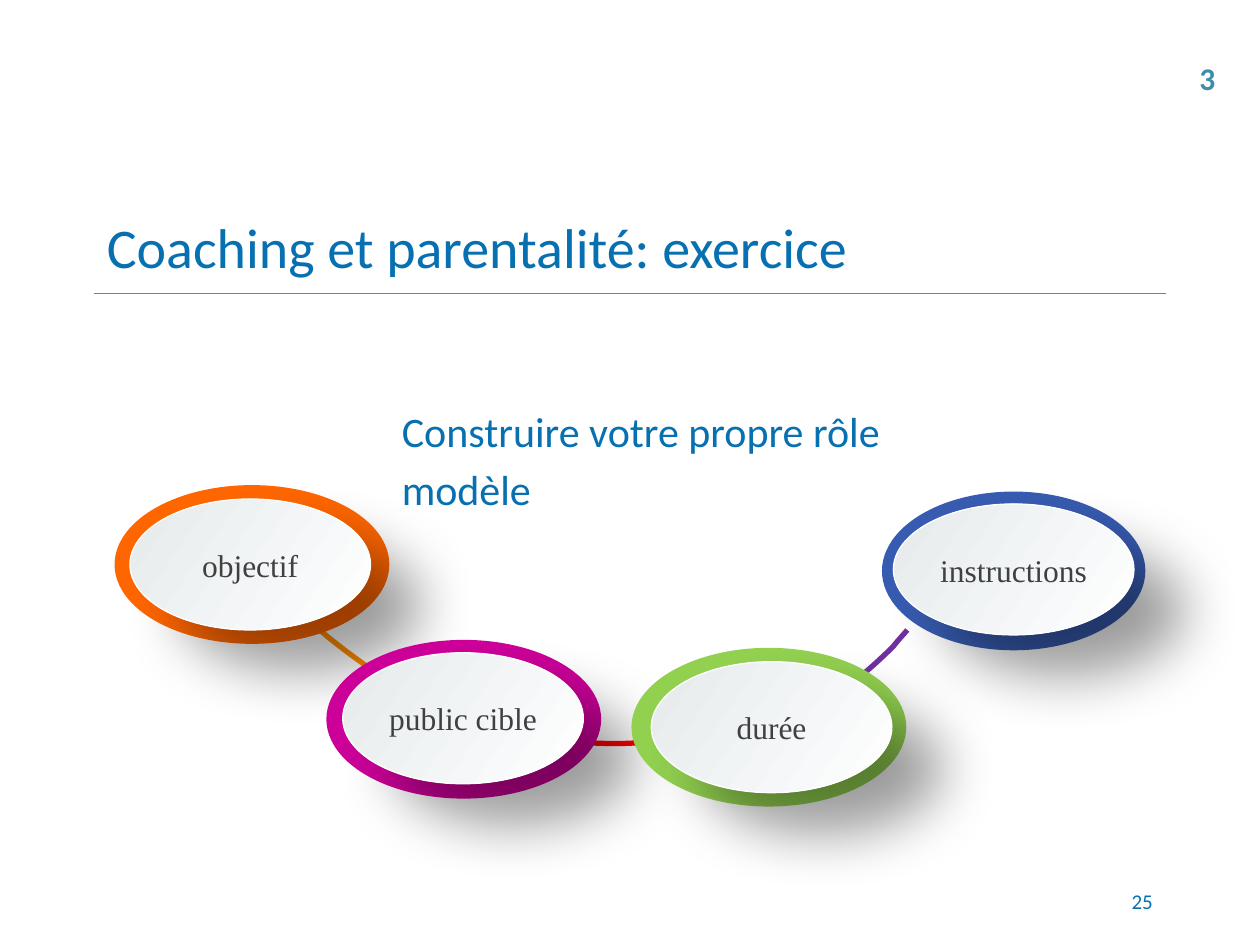
from lxml.etree import SubElement
from pptx import Presentation
from pptx.dml.color import RGBColor
from pptx.enum.shapes import MSO_CONNECTOR, MSO_SHAPE
from pptx.enum.text import MSO_ANCHOR, MSO_AUTO_SIZE, PP_ALIGN
from pptx.oxml.ns import qn
from pptx.util import Cm, Pt

COLORS = {
    "text": "0770B1", "number": "3E8EA9", "rule": "0BA7DF", "label": "404040",
    "grey": "E6EAEB", "white": "FFFFFF", "shadow": "000000",
    "orange": "FF6600", "magenta": "CC0099", "green": "92D050", "blue": "375BB0",
    "purple arc": "7030A0", "red arc": "FF0000", "orange arc": "FF8A00",
}


def color(name):
    return RGBColor.from_string(COLORS[name])


def write(shape, text, font, anchor=MSO_ANCHOR.TOP, align=PP_ALIGN.LEFT, wrap=True):
    frame = shape.text_frame
    frame.word_wrap = wrap
    frame.vertical_anchor = anchor
    para = frame.paragraphs[0]
    para.alignment = align
    span = para.add_run()
    span.text = text
    for name, value in font.items():
        if name == "color":
            span.font.color.rgb = color(value)
        else:
            setattr(span.font, name, value)
    return para


deck = Presentation()
deck.slide_width, deck.slide_height = Cm(25.4), Cm(19.05)
page = deck.slides.add_slide(deck.slide_layouts[5])
shapes = page.shapes
body_font = {"name": "Calibri", "size": Pt(24), "color": "text"}

# Title and the rule below it
title = shapes.title
title_place = {"left": Cm(1.9), "top": Cm(4.01), "width": Cm(21.59), "height": Cm(1.9)}
for name, value in title_place.items():
    setattr(title, name, value)
write(title, "Coaching et parentalité: exercice", {**body_font, "size": Pt(32)},
      MSO_ANCHOR.MIDDLE)
rule = shapes.add_connector(MSO_CONNECTOR.STRAIGHT, Cm(1.9), Cm(5.92), Cm(23.5), Cm(5.92))
rule.line.color.rgb = color("rule")
rule.line.width = Pt(0.75)
SubElement(rule.element.spPr, qn("a:effectLst"))

# Arcs between the ovals: Bezier points, three more for each further piece
arcs = [
    ("purple arc", [(18.29, 12.7), (18.21, 12.8), (18.11, 12.9), (18.01, 13.03),
                    (17.68, 13.36), (17.32, 13.67), (16.97, 13.94)]),
    ("purple arc", [(16.97, 13.94), (16.51, 14.25), (16.03, 14.5), (15.52, 14.71)]),
    ("red arc", [(11.4, 14.94), (11.96, 14.99), (12.52, 15.01), (13.06, 14.96),
                 (13.36, 14.96), (13.64, 14.91), (13.92, 14.88)]),
    ("orange arc", [(6.27, 12.55), (6.81, 13.03), (7.47, 13.51), (8.18, 13.94)]),
]
steps = 10
for name, points in arcs:
    trace = []
    for first in range(0, len(points) - 1, 3):
        piece = points[first:first + 4]
        for step in range(1, steps + 1):
            t = step / steps
            weights = ((1 - t) ** 3, 3 * t * (1 - t) ** 2, 3 * t * t * (1 - t), t ** 3)
            trace.append(tuple(Cm(sum(w * point[axis] for w, point in zip(weights, piece)))
                               for axis in (0, 1)))
    builder = shapes.build_freeform(Cm(points[0][0]), Cm(points[0][1]))
    builder.add_line_segments(trace, close=False)
    arc = builder.convert_to_shape()
    arc.shadow.inherit = False
    arc.fill.background()
    arc.line.color.rgb = color(name)
    arc.line.width = Pt(3)

# Ovals: coloured ring, then a pale face with label and shadow
ovals = [
    ("instructions", "blue", (17.78, 9.91), 5.31, (18.01, 10.16)),
    ("objectif", "orange", (2.31, 9.78), 5.54, (2.62, 10.06)),
    ("public cible", "magenta", (6.58, 12.9), 5.54, (6.91, 13.16)),
    ("durée", "green", (12.73, 13.06), 5.54, (13.13, 13.34)),
]
label_font = {"name": "Times New Roman", "size": Pt(18), "color": "label"}
for label, ring_color, (left, top), width, (face_left, face_top) in ovals:
    ring = shapes.add_shape(MSO_SHAPE.OVAL, Cm(left), Cm(top), Cm(width), Cm(3.2))
    ring.shadow.inherit = False
    ring.fill.solid()
    ring.fill.fore_color.rgb = color(ring_color)
    ring.line.fill.background()

    face = shapes.add_shape(MSO_SHAPE.OVAL, Cm(face_left), Cm(face_top), Cm(4.85), Cm(2.64))
    face.fill.gradient()
    face.fill.gradient_angle = 325
    for stop, name in zip(face.fill.gradient_stops, ("grey", "white")):
        stop.color.rgb = color(name)
    face.line.color.rgb = color("white")
    face.line.width = Pt(0)
    face.shadow.inherit = False
    effects = face.element.spPr.find(qn("a:effectLst"))
    shadow = SubElement(effects, qn("a:outerShdw"), blurRad=str(Pt(33)), dist=str(Pt(36.7)),
                        dir=str(39 * 60000), algn="ctr", rotWithShape="0")
    shade = SubElement(shadow, qn("a:srgbClr"), val=COLORS["shadow"])
    SubElement(shade, qn("a:alpha"), val="38000")
    for side in ("left", "top", "right", "bottom"):
        setattr(face.text_frame, "margin_" + side, 0)
    write(face, label, label_font, MSO_ANCHOR.MIDDLE, PP_ALIGN.CENTER)

# Exercise text
box = shapes.add_textbox(Cm(7.85), Cm(7.9), Cm(12.37), Cm(2.59))
para = write(box, "Construire votre propre rôle modèle", body_font)
para.line_spacing = 1.15
para.space_after = Pt(6)
box.text_frame.auto_size = MSO_AUTO_SIZE.SHAPE_TO_FIT_TEXT

# Page number and section number
box = shapes.add_textbox(Cm(18.21), Cm(17.65), Cm(5.28), Cm(1.02))
write(box, "25", {**body_font, "size": Pt(12)}, MSO_ANCHOR.MIDDLE, PP_ALIGN.RIGHT)
box = shapes.add_textbox(Cm(23.93), Cm(1.07), Cm(0.81), Cm(1.02))
write(box, "3", {"name": "Calibri", "size": Pt(18), "bold": True, "color": "number"}, wrap=False)
box.text_frame.auto_size = MSO_AUTO_SIZE.SHAPE_TO_FIT_TEXT

deck.save("out.pptx")
